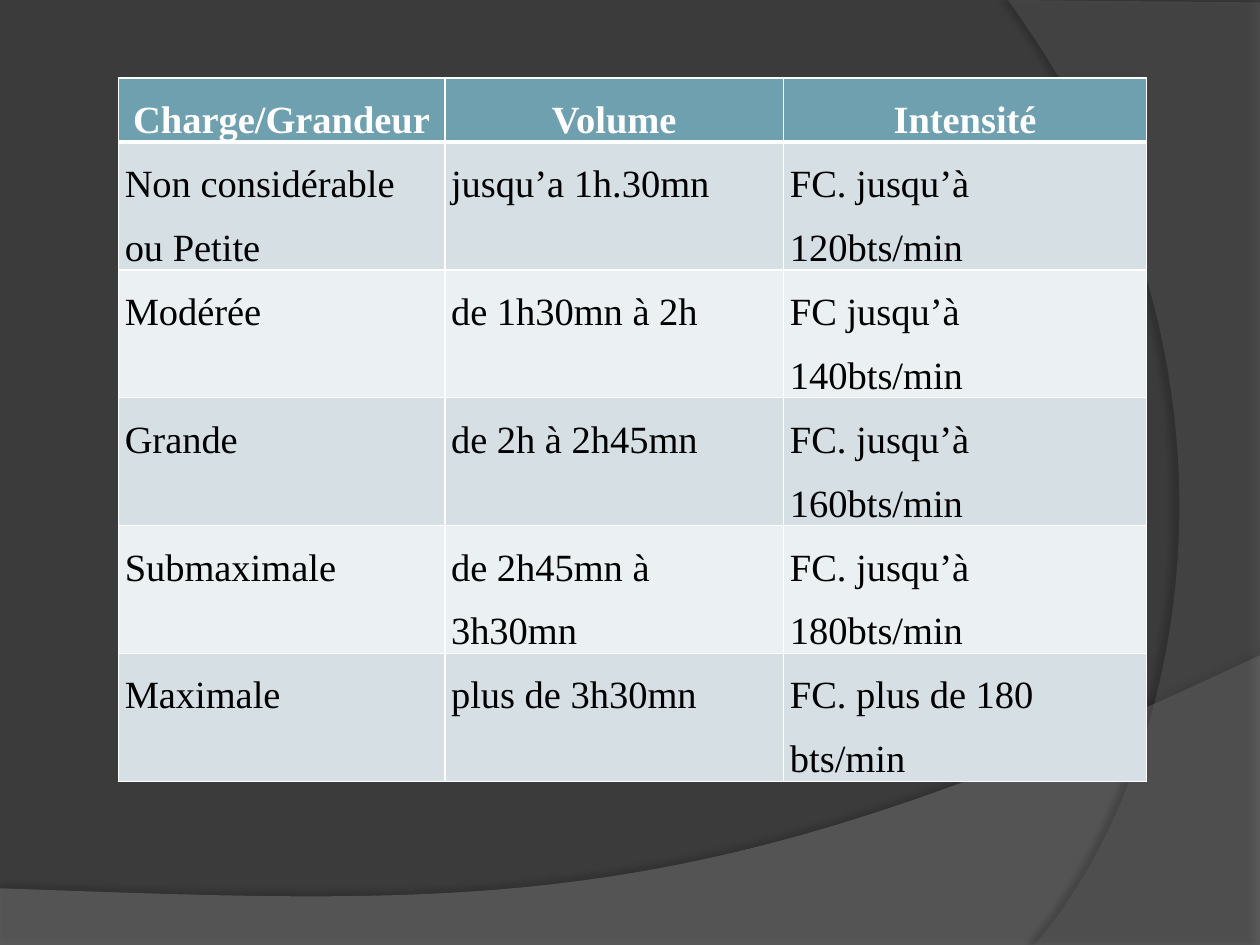
from lxml.etree import SubElement
from pptx import Presentation
from pptx.dml.color import RGBColor
from pptx.enum.text import PP_ALIGN
from pptx.oxml.ns import qn
from pptx.util import Inches, Pt

COLORS = {
    "background": "3B3B3B",
    "bottom_wave": "7F7F7F",
    "right_wave": "5E5E5E",
    "shadow": "000000",
    "header": "6EA0B0",
    "odd_row": "D5DFE4",
    "even_row": "EBF0F2",
    "border": "FFFFFF",
    "header_text": "FFFFFF",
    "body_text": "000000",
}
LOADS = [
    ("Charge/Grandeur", "Volume", "Intensité"),
    ("Non considérable ou Petite", "jusqu’a 1h.30mn", "FC. jusqu’à 120bts/min"),
    ("Modérée", "de 1h30mn à 2h", "FC jusqu’à 140bts/min"),
    ("Grande", "de 2h à 2h45mn", "FC. jusqu’à 160bts/min"),
    ("Submaximale", "de 2h45mn à 3h30mn", "FC. jusqu’à 180bts/min"),
    ("Maximale", "plus de 3h30mn", "FC. plus de 180 bts/min"),
]
COLUMN_WIDTHS = (2.59, 2.69, 2.88)
CELL_FORMAT = {
    "margin_left": Inches(0.05),
    "margin_right": Inches(0.05),
    "margin_top": 0,
    "margin_bottom": 0,
}
FONT_FORMAT = {"name": "Times New Roman", "size": Pt(22)}


def rgb(role):
    """Return the colour that belongs to a role."""
    return RGBColor.from_string(COLORS[role])


def set_values(target, values):
    """Set each attribute of target from a dict."""
    for attribute, value in values.items():
        setattr(target, attribute, value)


def curve(start, control_1, control_2, end, steps=60):
    """Return points along a cubic Bezier curve."""
    points = []
    for step in range(steps + 1):
        t = step / steps
        weights = ((1 - t) ** 3, 3 * t * (1 - t) ** 2, 3 * t**2 * (1 - t), t**3)
        points.append(tuple(
            sum(w * c for w, c in zip(weights, axis))
            for axis in zip(start, control_1, control_2, end)
        ))
    return points


def add_color(parent, role, opacity=None):
    """Add a colour element, with opacity in percent if given."""
    color = SubElement(parent, qn("a:srgbClr"), val=COLORS[role])
    if opacity is not None:
        SubElement(color, qn("a:alpha"), val=str(opacity * 1000))


def add_wave(slide, points, role, opacity, shadow_opacity, distance, direction):
    """Add a translucent background wave with a soft shadow."""
    corners = [(Inches(x), Inches(y)) for x, y in points]
    builder = slide.shapes.build_freeform(*corners[0], scale=1.0)
    builder.add_line_segments(corners[1:], close=True)
    wave = builder.convert_to_shape()
    wave.line.fill.background()
    wave.shadow.inherit = False
    properties = wave.fill._xPr
    wave.fill.solid()
    wave.fill.fore_color.rgb = rgb(role)
    color = properties.find(qn("a:solidFill")).find(qn("a:srgbClr"))
    SubElement(color, qn("a:alpha"), val=str(opacity * 1000))
    shadow = SubElement(
        properties.find(qn("a:effectLst")), qn("a:outerShdw"),
        blurRad=str(Pt(4)), dist=str(Pt(distance)),
        dir=str(direction * 60000), algn="ctr", rotWithShape="0",
    )
    add_color(shadow, "shadow", shadow_opacity)


def add_borders(cell, top, bottom):
    """Draw the four cell borders, with top and bottom widths in points."""
    properties = cell._tc.get_or_add_tcPr()
    for side, width in {"L": 1, "R": 1, "T": top, "B": bottom}.items():
        line = SubElement(properties, qn(f"a:ln{side}"), w=str(Pt(width)))
        add_color(SubElement(line, qn("a:solidFill")), "border")


def fill_cell(cell, text, row):
    """Write and format one cell of the load table."""
    header = row == 0
    add_borders(cell, top=3 if row == 1 else 1, bottom=3 if header else 1)
    set_values(cell, CELL_FORMAT)
    cell.fill.solid()
    cell.fill.fore_color.rgb = rgb(
        "header" if header else "odd_row" if row % 2 else "even_row"
    )
    paragraph = cell.text_frame.paragraphs[0]
    paragraph.alignment = PP_ALIGN.CENTER if header else PP_ALIGN.LEFT
    paragraph.line_spacing = 1.5
    label = paragraph.add_run()
    label.text = text
    set_values(label.font, FONT_FORMAT)
    label.font.bold = header
    label.font.color.rgb = rgb("header_text" if header else "body_text")


def add_load_table(slide):
    """Add the table of training loads."""
    frame = slide.shapes.add_table(
        len(LOADS), len(COLUMN_WIDTHS),
        Inches(0.94), Inches(0.62), Inches(sum(COLUMN_WIDTHS)), Inches(5.66),
    )
    load_table = frame.table
    load_table.horz_banding = False
    for column, width in zip(load_table.columns, COLUMN_WIDTHS):
        column.width = Inches(width)
    for row, texts in enumerate(LOADS):
        load_table.rows[row].height = Inches(0.41)
        for column, text in enumerate(texts):
            fill_cell(load_table.cell(row, column), text, row)
    frame.height = Inches(5.66)


def main():
    """Build the slide and save it."""
    presentation = Presentation()
    presentation.slide_width = Inches(10)
    presentation.slide_height = Inches(7.5)
    slide = presentation.slides.add_slide(presentation.slide_layouts[6])
    slide.background.fill.solid()
    slide.background.fill.fore_color.rgb = rgb("background")
    bottom_edge = curve((10, 5.2), (5.59, 7.29), (3.91, 7.19), (0, 7.05))
    right_edge = curve((8.21, 7.5), (9.35, 6.19), (10.18, 3), (8, 0))
    add_wave(slide, [(0, 7.51), (10, 7.51), *bottom_edge],
             "bottom_wave", 45, 35, 3.5, 270)
    add_wave(slide, [(10, 0.02), (10, 7.5), *right_edge],
             "right_wave", 40, 45, 4, 180)
    add_load_table(slide)
    presentation.save("out.pptx")


if __name__ == "__main__":
    main()
